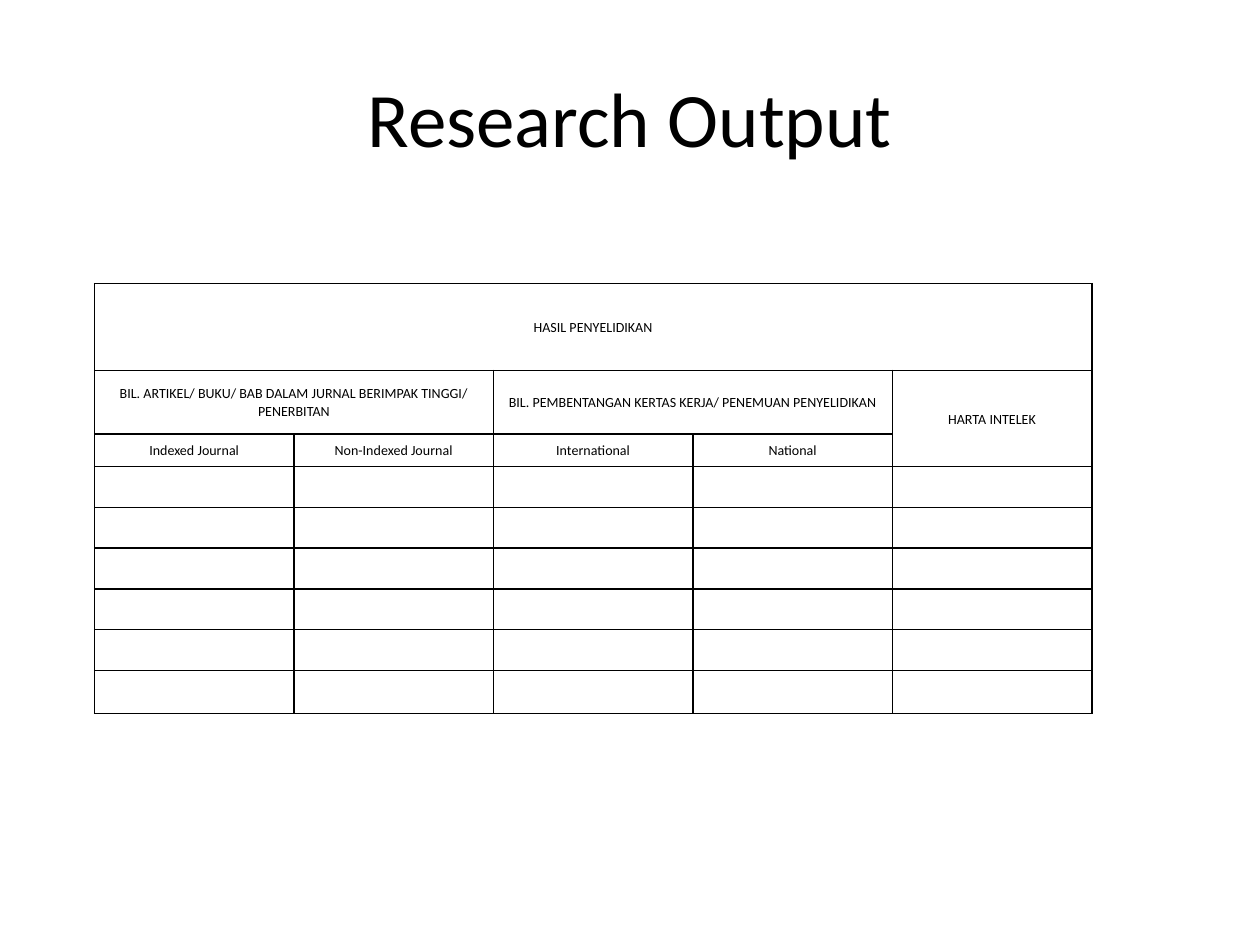
from dataclasses import dataclass

from lxml.etree import SubElement
from pptx import Presentation
from pptx.dml.color import RGBColor
from pptx.enum.text import MSO_ANCHOR, PP_ALIGN
from pptx.oxml.ns import qn
from pptx.util import Pt


@dataclass(frozen=True)
class Theme:
    font: str = "Calibri"
    ink: str = "000000"
    title_size: float = 44
    cell_size: float = 8
    border: float = 1


class SlideBuilder:
    """Holds the theme and the current page, and adds elements to it."""

    def __init__(self, page, theme):
        self.page = page
        self.theme = theme

    def add_text(self, para, text, size):
        para.alignment = PP_ALIGN.CENTER
        span = para.add_run()
        span.text = text
        span.font.color.rgb = RGBColor.from_string(self.theme.ink)
        formats = {"name": self.theme.font, "size": Pt(size), "bold": False}
        for name, value in formats.items():
            setattr(span.font, name, value)

    def title(self, text, left, top, width, height):
        box = self.page.shapes.add_textbox(Pt(left), Pt(top), Pt(width), Pt(height))
        frame = box.text_frame
        formats = {"word_wrap": True, "vertical_anchor": MSO_ANCHOR.MIDDLE}
        for name, value in formats.items():
            setattr(frame, name, value)
        self.add_text(frame.paragraphs[0], text, self.theme.title_size)

    def outline(self, cell):
        properties = cell._tc.get_or_add_tcPr()
        for side in ("a:lnL", "a:lnR", "a:lnT", "a:lnB"):
            line = SubElement(properties, qn(side), w=str(Pt(self.theme.border)))
            fill = SubElement(line, qn("a:solidFill"))
            SubElement(fill, qn("a:srgbClr"), val=self.theme.ink)

    def style_cell(self, cell):
        formats = {
            "margin_left": Pt(0.7),
            "margin_right": Pt(0.7),
            "margin_top": Pt(0.7),
            "margin_bottom": Pt(0),
            "vertical_anchor": MSO_ANCHOR.MIDDLE,
        }
        for name, value in formats.items():
            setattr(cell, name, value)
        self.outline(cell)
        cell.fill.background()
        ending = cell.text_frame.paragraphs[0]._p.get_or_add_endParaRPr()
        ending.set("sz", str(int(self.theme.cell_size * 100)))

    def table(self, left, top, column_widths, row_heights, headings):
        grid = self.page.shapes.add_table(
            len(row_heights), len(column_widths), Pt(left), Pt(top),
            Pt(sum(column_widths)), Pt(sum(row_heights)),
        ).table
        for name in ("first_row", "horz_banding"):
            setattr(grid, name, False)
        for column, width in zip(grid.columns, column_widths):
            column.width = Pt(width)
        for row, height in zip(grid.rows, row_heights):
            row.height = Pt(height)
        for cell in grid.iter_cells():
            self.style_cell(cell)
        for row, column, rows, columns, text in headings:
            cell = grid.cell(row, column)
            if rows * columns > 1:
                cell.merge(grid.cell(row + rows - 1, column + columns - 1))
            self.add_text(cell.text_frame.paragraphs[0], text, self.theme.cell_size)


def main():
    deck = Presentation()
    deck.slide_width, deck.slide_height = Pt(720), Pt(540)
    builder = SlideBuilder(deck.slides.add_slide(deck.slide_layouts[6]), Theme())
    builder.title("Research Output", 36, 21.6, 648, 90)

    headings = [
        (0, 0, 1, 5, "HASIL PENYELIDIKAN"),
        (1, 0, 1, 2, "BIL. ARTIKEL/ BUKU/ BAB DALAM JURNAL BERIMPAK TINGGI/ PENERBITAN"),
        (1, 2, 1, 2, "BIL. PEMBENTANGAN KERTAS KERJA/ PENEMUAN PENYELIDIKAN"),
        (1, 4, 2, 1, "HARTA INTELEK"),
    ]
    outlets = ["Indexed Journal", "Non-Indexed Journal", "International", "National"]
    headings += [(2, column, 1, 1, text) for column, text in enumerate(outlets)]
    row_heights = [49.7, 36.2, 18.8] + [23.3] * 5 + [24.8]
    builder.table(54, 162, [114] * 5, row_heights, headings)
    deck.save("out.pptx")


if __name__ == "__main__":
    main()
